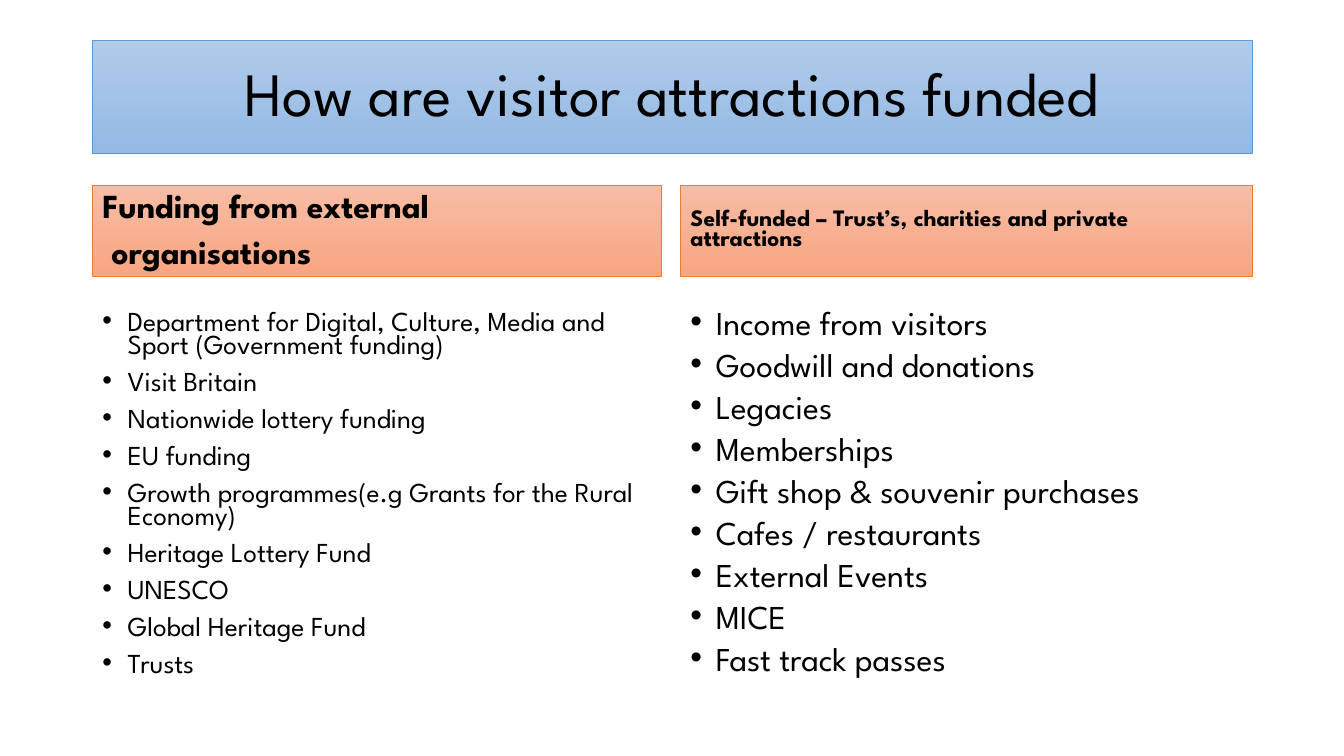
from dataclasses import dataclass

from lxml.etree import SubElement
from pptx import Presentation
from pptx.dml.color import RGBColor
from pptx.enum.shapes import MSO_SHAPE
from pptx.enum.text import MSO_ANCHOR, MSO_AUTO_SIZE, PP_ALIGN
from pptx.oxml.ns import qn
from pptx.util import Cm, Pt


@dataclass(frozen=True)
class Theme:
    font: str = "League Spartan"
    ink: str = "000000"
    blue: tuple = ("B1CBE9", "93B9E4", "5B9BD5")  # top, bottom, outline
    orange: tuple = ("F7BDA5", "F8A582", "ED7D31")
    outline: float = 0.5
    title_size: float = 44
    external_heading_size: float = 24
    self_heading_size: float = 16.8
    external_list_size: float = 19.6
    self_list_size: float = 23.8
    space_before: float = 10


THEME = Theme()

# Horizontal and vertical bands of the page, in centimetres: start, length
LEFT_COLUMN, RIGHT_COLUMN = (2.33, 14.33), (17.15, 14.4)
TITLE_BAND, HEADING_BAND, LIST_BAND = (1.02, 2.84), (4.67, 2.29), (7.77, 10.24)
INDENT = Cm(0.64)

EXTERNAL_SOURCES = [
    "Department for Digital, Culture, Media and Sport (Government funding)",
    "Visit Britain",
    "Nationwide lottery funding",
    "EU funding",
    "Growth programmes(e.g Grants for the Rural Economy)",
    "Heritage Lottery Fund",
    "UNESCO",
    "Global Heritage Fund",
    "Trusts",
]
OWN_SOURCES = [
    "Income from visitors",
    "Goodwill and donations",
    "Legacies",
    "Memberships",
    "Gift shop & souvenir purchases",
    "Cafes / restaurants",
    "External Events",
    "MICE",
    "Fast track passes",
]


def apply(target, values):
    for name, value in values.items():
        setattr(target, name, value)


def area(column, band):
    """Left, top, width and height where a column meets a band."""
    return [Cm(value) for value in (column[0], band[0], column[1], band[1])]


def paint(box, colours):
    """Vertical gradient with a thin outline."""
    top, bottom, edge = colours
    box.fill.gradient()
    box.fill.gradient_angle = 270
    for stop, colour in zip(box.fill.gradient_stops, (top, bottom)):
        stop.color.rgb = RGBColor.from_string(colour)
    box.line.color.rgb = RGBColor.from_string(edge)
    box.line.width = Pt(THEME.outline)


def set_indent(para, left, first=0):
    properties = para._p.get_or_add_pPr()
    properties.set("marL", str(left))
    properties.set("indent", str(first))
    return properties


def add_bullet(para):
    properties = set_indent(para, INDENT, -INDENT)
    SubElement(properties, qn("a:buFont")).set("typeface", "Arial")
    SubElement(properties, qn("a:buChar")).set("char", "•")


def write(box, lines, size, spacing, anchor, align=PP_ALIGN.LEFT, bold=False, bullets=False):
    frame = box.text_frame
    apply(frame, {"word_wrap": True, "auto_size": MSO_AUTO_SIZE.NONE,
                  "vertical_anchor": anchor})
    for index, line in enumerate(lines):
        para = frame.add_paragraph() if index else frame.paragraphs[0]
        apply(para, {"alignment": align, "line_spacing": spacing,
                     "space_before": Pt(THEME.space_before if index else 0)})
        if bullets:
            add_bullet(para)
        span = para.add_run()
        span.text = line
        apply(span.font, {"name": THEME.font, "size": Pt(size), "bold": bold})
        span.font.color.rgb = RGBColor.from_string(THEME.ink)


def add_title(page, text):
    box = page.shapes.title
    column = (LEFT_COLUMN[0], RIGHT_COLUMN[0] + RIGHT_COLUMN[1] - LEFT_COLUMN[0])
    apply(box, dict(zip(("left", "top", "width", "height"), area(column, TITLE_BAND))))
    paint(box, THEME.blue)
    write(box, [text], THEME.title_size, 0.9, MSO_ANCHOR.MIDDLE, PP_ALIGN.CENTER)


def add_heading(page, column, lines, size, spacing, anchor):
    box = page.shapes.add_shape(MSO_SHAPE.RECTANGLE, *area(column, HEADING_BAND))
    box.shadow.inherit = False
    paint(box, THEME.orange)
    write(box, lines, size, spacing, anchor, bold=True)
    return box


def add_list(page, column, items, size):
    box = page.shapes.add_textbox(*area(column, LIST_BAND))
    write(box, items, size, 0.7, MSO_ANCHOR.TOP, bullets=True)


def main():
    deck = Presentation()
    apply(deck, {"slide_width": Cm(33.87), "slide_height": Cm(19.05)})
    page = deck.slides.add_slide(deck.slide_layouts.get_by_name("Title Only"))
    add_title(page, "How are visitor attractions funded")

    # Left column: money from outside
    heading = add_heading(page, LEFT_COLUMN, ["Funding from external", "organisations"],
                          THEME.external_heading_size, 0.8, MSO_ANCHOR.BOTTOM)
    set_indent(heading.text_frame.paragraphs[1], Cm(0.23))
    add_list(page, LEFT_COLUMN, EXTERNAL_SOURCES, THEME.external_list_size)

    # Right column: money the attraction raises itself
    add_heading(page, RIGHT_COLUMN, ["Self-funded – Trust’s, charities and private attractions"],
                THEME.self_heading_size, 0.7, MSO_ANCHOR.MIDDLE)
    add_list(page, RIGHT_COLUMN, OWN_SOURCES, THEME.self_list_size)

    deck.save("out.pptx")


if __name__ == "__main__":
    main()
